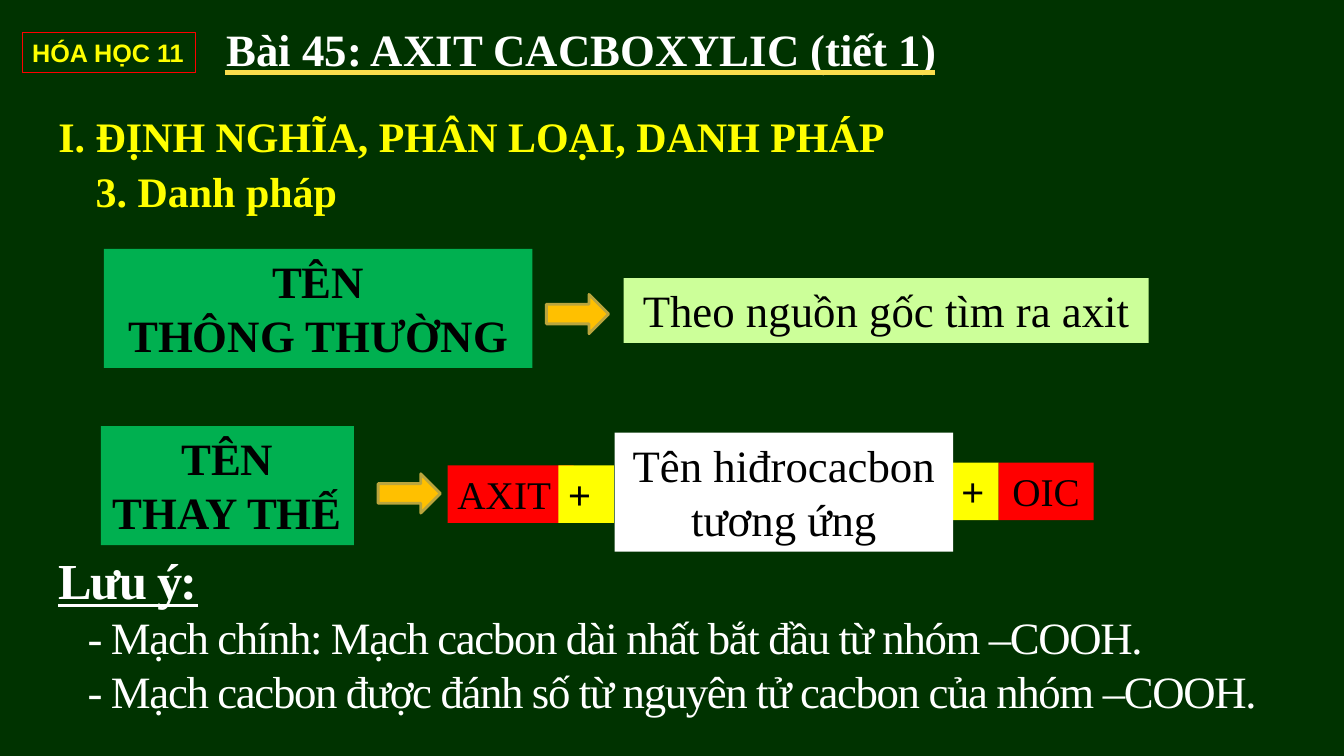
from dataclasses import dataclass

from pptx import Presentation
from pptx.dml.color import RGBColor
from pptx.enum.shapes import MSO_CONNECTOR, MSO_SHAPE
from pptx.enum.text import MSO_ANCHOR, MSO_AUTO_SIZE, PP_ALIGN
from pptx.oxml.ns import qn
from pptx.util import Cm, Pt
from lxml.etree import SubElement


@dataclass(frozen=True)
class Theme:
    board: str = "003300"
    white: str = "FFFFFF"
    black: str = "000000"
    yellow: str = "FFFF00"
    red: str = "FF0000"
    green: str = "00B050"
    lime: str = "CCFF99"
    rule: str = "FADD4D"
    arrow: str = "FFC000"
    arrow_edge: str = "BAA53D"
    serif: str = "Times New Roman"
    sans: str = "Arial"
    badge: int = 18
    term: int = 28
    heading: int = 30
    body: int = 32
    note: int = 36


T = Theme()


def rgb(code):
    return RGBColor.from_string(code)


def write(p, text, size=T.body, color=T.black, font=T.serif, bold=False,
          underline=False, align=PP_ALIGN.LEFT, spacing=0, indent=0):
    """Put text into a paragraph; spacing is in points, indent in cm."""
    p.alignment = align
    if indent:
        p._p.get_or_add_pPr().set("marL", str(Cm(indent)))
    r = p.add_run()
    r.text = text
    f = r.font
    f.size, f.name, f.bold, f.underline = Pt(size), font, bold, underline
    f.color.rgb = rgb(color)
    if spacing:
        r._r.get_or_add_rPr().set("spc", str(spacing * 100))


def write_lines(tf, lines, wrap=True, anchor=MSO_ANCHOR.TOP, **fmt):
    tf.word_wrap = wrap
    tf.vertical_anchor = anchor
    if not wrap:
        tf.auto_size = MSO_AUTO_SIZE.SHAPE_TO_FIT_TEXT
    for i, line in enumerate(lines):
        write(tf.add_paragraph() if i else tf.paragraphs[0], line, **fmt)


def add_text(s, box, *lines, **fmt):
    tf = s.shapes.add_textbox(*map(Cm, box)).text_frame
    write_lines(tf, lines, **fmt)
    return tf


def add_preset(s, kind, box, fill=None, line=None, width=0.75):
    sp = s.shapes.add_shape(kind, *map(Cm, box))
    sp.shadow.inherit = False
    if fill:
        sp.fill.solid()
        sp.fill.fore_color.rgb = rgb(fill)
    else:
        sp.fill.background()
    if line:
        sp.line.color.rgb = rgb(line)
        sp.line.width = Pt(width)
    else:
        sp.line.fill.background()
    return sp


def add_box(s, box, *lines, fill=None, line=None, align=PP_ALIGN.CENTER, **fmt):
    sp = add_preset(s, MSO_SHAPE.RECTANGLE, box, fill, line)
    write_lines(sp.text_frame, lines, align=align, **fmt)


def add_arrow(s, left, top):
    add_preset(s, MSO_SHAPE.RIGHT_ARROW, (left, top, 1.57, 0.99),
               T.arrow, T.arrow_edge, 2)


def add_rule(s, left, right, y):
    ln = s.shapes.add_connector(MSO_CONNECTOR.STRAIGHT,
                                Cm(left), Cm(y), Cm(right), Cm(y))
    ln.line.color.rgb = rgb(T.rule)
    ln.line.width = Pt(3.5)
    SubElement(ln._element.spPr, qn("a:effectLst"))


def add_header(s):
    add_box(s, (0.56, 0.81, 4.37, 1.02), "HÓA HỌC 11", line=T.red, wrap=False,
            align=PP_ALIGN.LEFT, size=T.badge, font=T.sans, color=T.yellow, bold=True)
    add_text(s, (5.46, 0.43, 18.57, 1.63), "Bài 45: AXIT CACBOXYLIC (tiết 1)",
             wrap=False, color=T.white, bold=True)
    add_rule(s, 5.66, 23.57, 1.83)
    headings = ((1.22, 2.72, "I. ĐỊNH NGHĨA, PHÂN LOẠI, DANH PHÁP"),
                (2.16, 4.09, "3. Danh pháp"))
    for left, top, text in headings:
        add_text(s, (left, top, 26.77, 1.47), text, anchor=MSO_ANCHOR.BOTTOM,
                 size=T.heading, color=T.yellow, bold=True)


def add_common_name(s):
    add_box(s, (2.62, 6.27, 10.8, 3), "TÊN", "THÔNG THƯỜNG", fill=T.green, bold=True)
    add_arrow(s, 13.77, 7.42)
    add_box(s, (15.72, 7.01, 13.23, 1.63), "Theo nguồn gốc tìm ra axit", fill=T.lime)


def add_systematic_name(s):
    add_box(s, (2.54, 10.74, 6.38, 3), "TÊN", "THAY THẾ", fill=T.green, bold=True)
    add_arrow(s, 9.53, 11.94)
    left, center = PP_ALIGN.LEFT, PP_ALIGN.CENTER
    terms = (("AXIT", 11.28, 11.73, 3.18, T.red, T.serif, left),
             ("+", 14.07, 11.73, 1.4, T.yellow, T.sans, left),
             ("+", 23.98, 11.66, 1.19, T.yellow, T.sans, left),
             ("OIC", 25.17, 11.66, 2.39, T.red, T.serif, center))
    for text, x, y, width, fill, font, align in terms:
        add_box(s, (x, y, width, 1.45), text, fill=fill, font=font,
                align=align, size=T.term)
    add_box(s, (15.49, 10.9, 8.53, 3), "Tên hiđrocacbon tương ứng", fill=T.white)


def add_note(s):
    fmt = dict(color=T.white, align=PP_ALIGN.JUSTIFY, spacing=-1)
    tf = add_text(s, (1.22, 13.72, 30.96, 4.52), "Lưu ý:",
                  size=T.note, bold=True, underline=True, **fmt)
    for line in ("- Mạch chính: Mạch cacbon dài nhất bắt đầu từ nhóm –COOH.",
                 "- Mạch cacbon được đánh số từ nguyên tử cacbon của nhóm –COOH."):
        write(tf.add_paragraph(), line, indent=0.74, **fmt)


def main():
    prs = Presentation()
    prs.slide_width, prs.slide_height = Cm(33.87), Cm(19.05)
    s = prs.slides.add_slide(prs.slide_layouts[6])
    s.background.fill.solid()
    s.background.fill.fore_color.rgb = rgb(T.board)
    add_header(s)
    add_common_name(s)
    add_systematic_name(s)
    add_note(s)
    prs.save("out.pptx")


if __name__ == "__main__":
    main()
